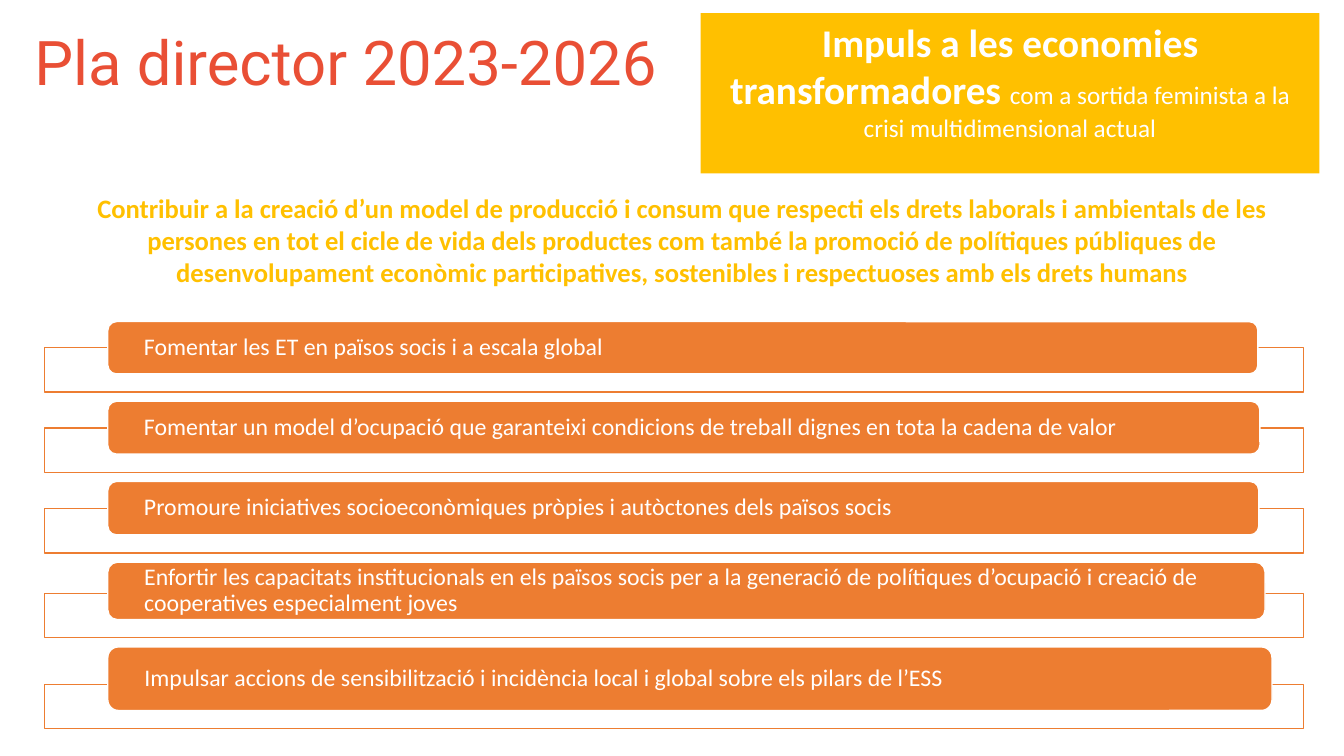
from pptx import Presentation
from pptx.dml.color import RGBColor
from pptx.enum.shapes import MSO_SHAPE as Shape
from pptx.enum.text import MSO_ANCHOR as Anchor, MSO_AUTO_SIZE as AutoSize, PP_ALIGN as Align
from pptx.util import Pt

ORANGE, AMBER, WHITE = "ED7D31", "FFC000", "FFFFFF"


def color(hex_value):
    return RGBColor.from_string(hex_value)


def style_run(run, size, hex_value, bold=False, face="Calibri"):
    run.font.name = face
    run.font.size = Pt(size)
    run.font.bold = bold
    run.font.color.rgb = color(hex_value)


deck = Presentation()
deck.slide_width, deck.slide_height = Pt(960), Pt(540)
slide = deck.slides.add_slide(deck.slide_layouts[5])
shapes = slide.shapes

title = shapes.title
title.left, title.top, title.width, title.height = Pt(17.3), Pt(7.2), Pt(464.4), Pt(79.2)
title.fill.solid()
title.fill.fore_color.rgb = color(WHITE)
title.text_frame.text = "Pla director 2023-2026"
title.text_frame.auto_size = AutoSize.NONE
title.text_frame.vertical_anchor = Anchor.MIDDLE
heading = title.text_frame.paragraphs[0]
heading.alignment = Align.LEFT
heading.line_spacing = 0.9
style_run(heading.runs[0], 44, "E94F35", face="Roboto")

focus = shapes.add_shape(Shape.RECTANGLE, Pt(500.4), Pt(9.4), Pt(442.1), Pt(114.5))
focus.shadow.inherit = False
focus.fill.solid()
focus.fill.fore_color.rgb = color(AMBER)
focus.line.fill.background()
focus.text_frame.word_wrap = True
focus.text_frame.vertical_anchor = Anchor.TOP
focus_line = focus.text_frame.paragraphs[0]
focus_line.alignment = Align.CENTER
for wording, size, bold in [
    ("Impuls a les economies transformadores ", 28, True),
    ("com a sortida feminista a la crisi multidimensional actual", 18, False),
]:
    run = focus_line.add_run()
    run.text = wording
    style_run(run, size, WHITE, bold)

objectives = [
    ("Fomentar les ET en països socis i a escala global", 821.5, 37.4),
    ("Fomentar un model d’ocupació que garanteixi condicions de treball dignes en tota la cadena de valor", 823, 37.8),
    ("Promoure iniciatives socioeconòmiques pròpies i autòctones dels països socis", 822.2, 38.2),
    ("Enfortir les capacitats institucionals en els països socis per a la generació de polítiques d’ocupació "
     "i creació de cooperatives especialment joves", 826.6, 41),
    ("Impulsar accions de sensibilització i incidència local i global sobre els pilars de l’ESS", 831.6, 45.4),
]
bar_top = 229.7
for wording, bar_width, bar_height in objectives:
    bar_bottom = bar_top + bar_height
    frame = shapes.add_shape(Shape.RECTANGLE, Pt(31.7), Pt(bar_bottom - 18.7), Pt(899.3), Pt(31.7))
    bar = shapes.add_shape(Shape.ROUNDED_RECTANGLE, Pt(77), Pt(bar_top), Pt(bar_width), Pt(bar_height))
    for part, fill, outline in [(frame, WHITE, ORANGE), (bar, ORANGE, WHITE)]:
        part.shadow.inherit = False
        part.fill.solid()
        part.fill.fore_color.rgb = color(fill)
        part.line.color.rgb = color(outline)
        part.line.width = Pt(1)
    label = bar.text_frame
    label.text = wording
    label.word_wrap = True
    label.vertical_anchor = Anchor.MIDDLE
    label.margin_left = label.margin_right = Pt(24)
    label.margin_top = label.margin_bottom = Pt(0)
    label.paragraphs[0].alignment = Align.LEFT
    label.paragraphs[0].line_spacing = 0.9
    style_run(label.paragraphs[0].runs[0], 17, WHITE)
    bar_top = bar_bottom + 19.5

goal = shapes.add_textbox(Pt(31.7), Pt(129.6), Pt(910.8), Pt(83.5)).text_frame
goal.text = (
    "Contribuir a la creació d’un model de producció i consum que respecti els drets laborals i ambientals "
    "de les persones en tot el cicle de vida dels productes com també la promoció de polítiques públiques de "
    "desenvolupament econòmic participatives, sostenibles i respectuoses amb els drets humans"
)
goal.word_wrap = True
goal.vertical_anchor = Anchor.MIDDLE
goal.paragraphs[0].alignment = Align.CENTER
style_run(goal.paragraphs[0].runs[0], 19, AMBER, True)

deck.save("out.pptx")
